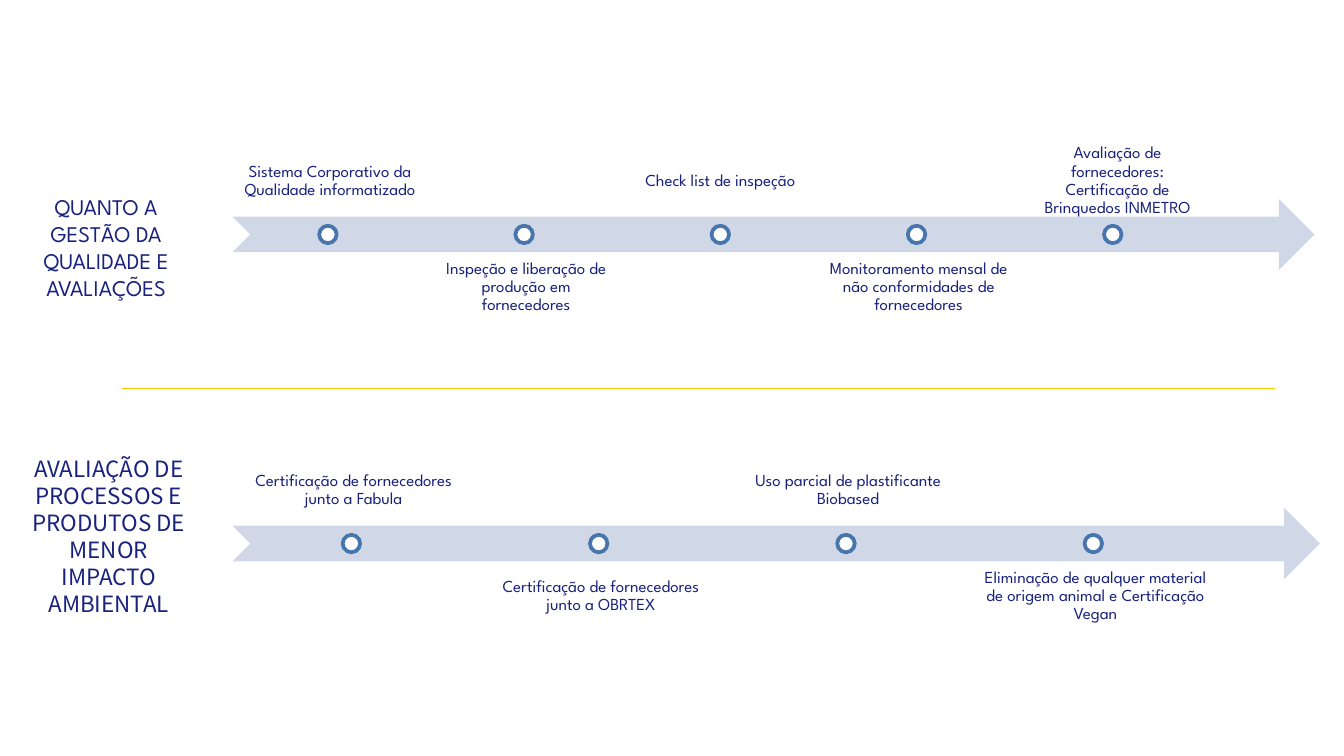
"""Build a slide with two milestone timelines separated by a rule."""
import dataclasses

import lxml.etree
import pptx
import pptx.dml.color
import pptx.enum.shapes
import pptx.enum.text
import pptx.oxml.ns
import pptx.shapes.autoshape
import pptx.shapes.shapetree
import pptx.slide
import pptx.util

Inches = pptx.util.Inches
SHAPE = pptx.enum.shapes.MSO_SHAPE

COLORS = {
    "text": "19227D",
    "arrow": "D0D8E8",
    "dot": "FFFFFF",
    "ring": "4875AC",
    "rule": "FFC800",
}
BODY_FONT = "League Spartan"
SLIDE_WIDTH = 10
STEP_LEFT = 1.74
ARROW_LEFT = 1.73
BAND_HEIGHT = 0.53
DOT_SIZE = 0.13
ABOVE, BELOW = -0.4, 0.39


@dataclasses.dataclass(frozen=True)
class Heading:
    text: str
    font: str
    left: float
    top: float
    height: float


@dataclasses.dataclass(frozen=True)
class Step:
    text: str
    nudge: float = 0


@dataclasses.dataclass(frozen=True)
class Timeline:
    heading: Heading
    arrow_top: float
    arrow_width: float
    step_width: float
    pitch: float
    steps: tuple[Step, ...]


TIMELINES = (
    Timeline(
        Heading("QUANTO A GESTÃO DA QUALIDADE E AVALIAÇÕES", BODY_FONT, 0.04, 1.39, 0.91),
        1.48, 8.05, 1.4, 1.46,
        (
            Step("Sistema Corporativo da Qualidade informatizado"),
            Step("Inspeção e liberação de produção em fornecedores"),
            Step("Check list de inspeção "),
            Step("Monitoramento mensal de não conformidades de fornecedores"),
            Step("Avaliação de fornecedores: Certificação de Brinquedos INMETRO", 0.02),
        ),
    ),
    Timeline(
        Heading(
            "AVALIAÇÃO DE PROCESSOS E PRODUTOS DE MENOR IMPACTO AMBIENTAL",
            "Noto Sans CJK TC", 0.06, 3.34, 1.31,
        ),
        3.78, 8.09, 1.75, 1.84,
        (
            Step("Certificação de fornecedores junto a Fabula"),
            Step("Certificação de fornecedores junto a OBRTEX"),
            Step("Uso parcial de plastificante Biobased"),
            Step("Eliminação de qualquer material de origem animal e Certificação Vegan"),
        ),
    ),
)


def rgb(name: str) -> pptx.dml.color.RGBColor:
    """Return the named palette colour."""
    return pptx.dml.color.RGBColor.from_string(COLORS[name])


def add_text(
    shapes: pptx.shapes.shapetree.GroupShapes | pptx.shapes.shapetree.SlideShapes,
    text: str,
    at: tuple[float, float, float, float],
    font: str,
    size: float,
    frame_format: dict,
    line_spacing: float = 1.0,
) -> None:
    """Add a wrapped, centred text box."""
    box = shapes.add_textbox(*map(Inches, at))
    for name, value in {"word_wrap": True, **frame_format}.items():
        setattr(box.text_frame, name, value)
    para = box.text_frame.paragraphs[0]
    para.alignment = pptx.enum.text.PP_ALIGN.CENTER
    para.line_spacing = line_spacing
    span = para.add_run()
    span.text = text
    for name, value in {"name": font, "size": pptx.util.Pt(size)}.items():
        setattr(span.font, name, value)
    span.font.color.rgb = rgb("text")


def add_filled(
    shapes: pptx.shapes.shapetree.GroupShapes,
    kind: pptx.enum.shapes.MSO_SHAPE,
    at: tuple[float, float, float, float],
    color: str,
) -> pptx.shapes.autoshape.Shape:
    """Add a flat preset shape without an outline."""
    shape = shapes.add_shape(kind, *map(Inches, at))
    shape.shadow.inherit = False
    shape.fill.solid()
    shape.fill.fore_color.rgb = rgb(color)
    shape.line.fill.background()
    return shape


def add_timeline(slide: pptx.slide.Slide, timeline: Timeline) -> None:
    """Draw a heading and its arrow with alternating milestones."""
    heading = timeline.heading
    add_text(
        slide.shapes, heading.text, (heading.left, heading.top, 1.5, heading.height),
        heading.font, 12,
        {"auto_size": pptx.enum.text.MSO_AUTO_SIZE.SHAPE_TO_FIT_TEXT},
    )
    step_format = {
        "vertical_anchor": pptx.enum.text.MSO_ANCHOR.MIDDLE,
        "margin_left": Inches(0.05),
        "margin_top": Inches(0.02),
        "margin_right": Inches(0.02),
        "margin_bottom": Inches(0.02),
    }
    shapes = slide.shapes.add_group_shape().shapes
    top, width = timeline.arrow_top, timeline.step_width
    add_filled(
        shapes, SHAPE.NOTCHED_RIGHT_ARROW,
        (ARROW_LEFT, top, timeline.arrow_width, BAND_HEIGHT), "arrow",
    )
    dot_top = top + (BAND_HEIGHT - DOT_SIZE) / 2
    for index, step in enumerate(timeline.steps):
        left = STEP_LEFT + index * timeline.pitch
        offset = BELOW if index % 2 else ABOVE
        add_text(
            shapes, step.text, (left + step.nudge, top + offset, width, BAND_HEIGHT),
            BODY_FONT, 9, step_format, 0.9,
        )
        dot_left = left + (width - DOT_SIZE) / 2
        dot = add_filled(shapes, SHAPE.OVAL, (dot_left, dot_top, DOT_SIZE, DOT_SIZE), "dot")
        dot.line.color.rgb = rgb("ring")
        dot.line.width = pptx.util.Pt(2)


def add_rule(slide: pptx.slide.Slide, left: float, right: float, top: float) -> None:
    """Draw the horizontal rule between the timelines."""
    rule = slide.shapes.add_connector(
        pptx.enum.shapes.MSO_CONNECTOR.STRAIGHT, *map(Inches, (left, top, right, top))
    )
    rule.line.color.rgb = rgb("rule")
    rule.line.width = pptx.util.Pt(0.75)
    lxml.etree.SubElement(rule._element.spPr, pptx.oxml.ns.qn("a:effectLst"))


def main() -> None:
    """Create and save the deck."""
    deck = pptx.Presentation()
    deck.slide_width = Inches(SLIDE_WIDTH)
    deck.slide_height = Inches(SLIDE_WIDTH * 9 / 16)
    page = deck.slides.add_slide(deck.slide_layouts.get_by_name("Blank"))
    for timeline in TIMELINES:
        add_timeline(page, timeline)
    add_rule(page, 0.91, 9.49, 2.89)
    deck.save("out.pptx")


if __name__ == "__main__":
    main()
